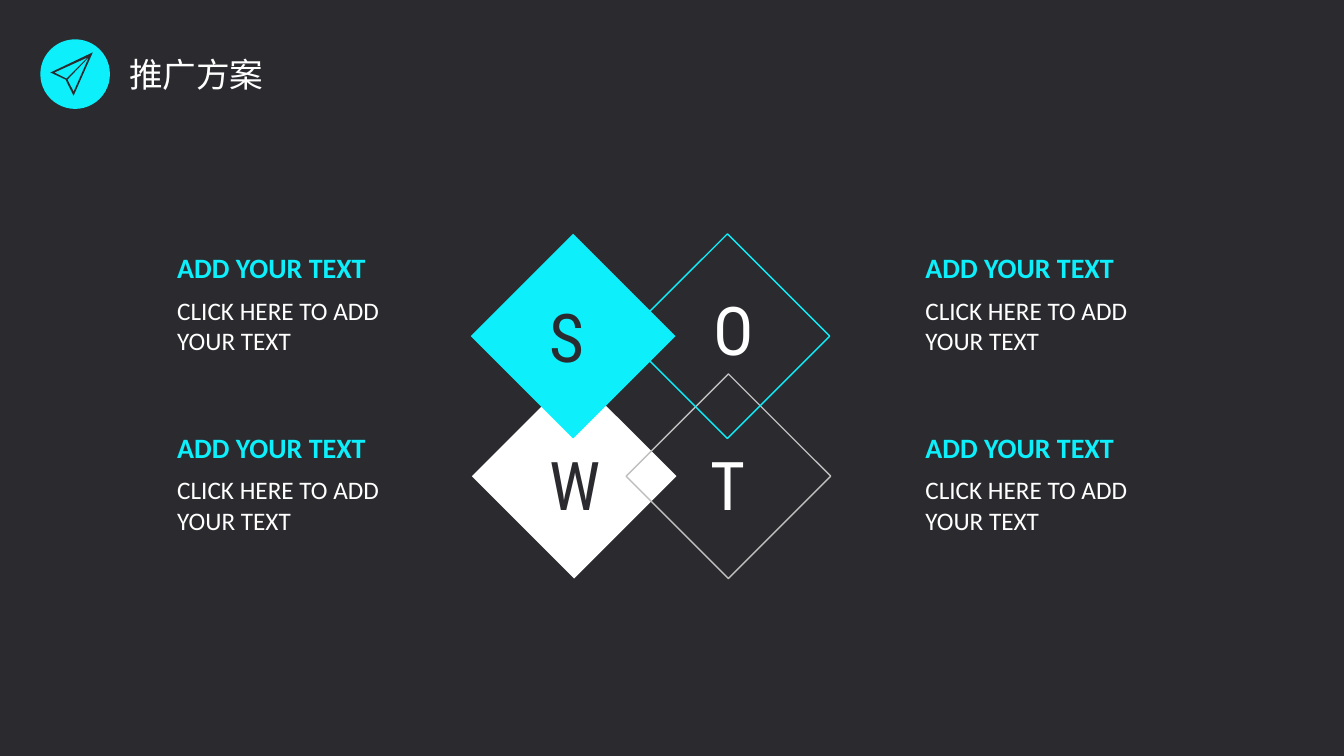
from lxml.etree import SubElement
from pptx import Presentation
from pptx.dml.color import RGBColor
from pptx.enum.shapes import MSO_SHAPE
from pptx.enum.text import MSO_ANCHOR, MSO_AUTO_SIZE, PP_ALIGN
from pptx.oxml.ns import qn
from pptx.util import Inches, Pt

DARK, CYAN, WHITE, GREY = "2B2A2F", "0DEFFA", "FFFFFF", "BFBFBF"
TITLE = "推广方案"
HEADING = "ADD YOUR TEXT"
BODY = "CLICK HERE TO ADD YOUR TEXT"

# Back to front: diamond left, top, fill, line
DIAMONDS = [
    (4.68, 3.71, WHITE, None),
    (6.21, 3.71, None, GREY),
    (4.67, 2.32, CYAN, None),
    (6.2, 2.32, None, CYAN),
]
DIAMOND_SIZE = 2.03

# Letter, left, top, colour
LETTERS = [
    ("S", 5.35, 2.88, DARK),
    ("W", 5.35, 4.35, DARK),
    ("O", 6.98, 2.81, WHITE),
    ("T", 6.95, 4.35, WHITE),
]

NOTE_COLUMNS = (1.66, 9.08)
NOTE_ROWS = (2.44, 4.22)
HEADING_HEIGHT = 0.44

# Paper plane outline and its two folds, in hundredths of an inch
PLANE = [
    [(65, 79), (73, 95), (92, 52), (50, 72)],
    [(66, 78), (54, 72), (87, 57)],
    [(73, 91), (67, 79), (88, 57)],
]


def rgb(color):
    return RGBColor.from_string(color)


def paint(shape, fill=None, line=None):
    shape.shadow.inherit = False
    if fill:
        shape.fill.solid()
        shape.fill.fore_color.rgb = rgb(fill)
    else:
        shape.fill.background()
    if line:
        shape.line.color.rgb = rgb(line)
        shape.line.width = Pt(1)
    else:
        shape.line.fill.background()


def write(shape, text, size, font, color, bold=False):
    tf = shape.text_frame
    tf.text = text
    tf.word_wrap = True
    tf.auto_size = MSO_AUTO_SIZE.NONE
    p = tf.paragraphs[0]
    p.alignment = PP_ALIGN.LEFT
    r = p.runs[0]
    r.font.size = Pt(size)
    r.font.name = font
    r.font.bold = bold
    r.font.color.rgb = rgb(color)
    SubElement(r.font._element, qn("a:ea")).set("typeface", font)


def add_text(s, left, top, width, height, *style):
    box = s.shapes.add_textbox(*map(Inches, (left, top, width, height)))
    write(box, *style)


def add_preset(s, preset, left, top, size, fill, line=None):
    shape = s.shapes.add_shape(preset, *map(Inches, (left, top, size, size)))
    paint(shape, fill, line)


def add_plane(s):
    outline, *folds = PLANE
    builder = s.shapes.build_freeform(*outline[0], scale=Inches(0.01))
    builder.add_line_segments(outline[1:], close=True)
    for fold in folds:
        builder.move_to(*fold[0])
        builder.add_line_segments(fold[1:], close=True)
    paint(builder.convert_to_shape(), DARK)


def main():
    prs = Presentation()
    prs.slide_width, prs.slide_height = Inches(13.33), Inches(7.5)
    s = prs.slides.add_slide(prs.slide_layouts[5])
    s.background.fill.solid()
    s.background.fill.fore_color.rgb = rgb(DARK)

    for left, top, fill, line in DIAMONDS:
        add_preset(s, MSO_SHAPE.DIAMOND, left, top, DIAMOND_SIZE, fill, line)
    for letter, left, top, color in LETTERS:
        add_text(s, left, top, 0.98, 0.91, letter, 48, "Roboto Condensed", color)

    for left in NOTE_COLUMNS:
        for top in NOTE_ROWS:
            add_text(s, left, top, 2.2, HEADING_HEIGHT,
                     HEADING, 20, "Calibri", CYAN, True)
            add_text(s, left, top + HEADING_HEIGHT, 2.7, 0.71,
                     BODY, 18, "Calibri", WHITE)

    add_preset(s, MSO_SHAPE.OVAL, 0.4, 0.39, 0.69, CYAN)
    add_plane(s)
    title = s.shapes.title
    title.left, title.top, title.width, title.height = map(
        Inches, (1.18, 0.48, 1.94, 0.5))
    write(title, TITLE, 24, "Noto Sans CJK SC", WHITE)
    title.text_frame.vertical_anchor = MSO_ANCHOR.TOP

    prs.save("out.pptx")


if __name__ == "__main__":
    main()
